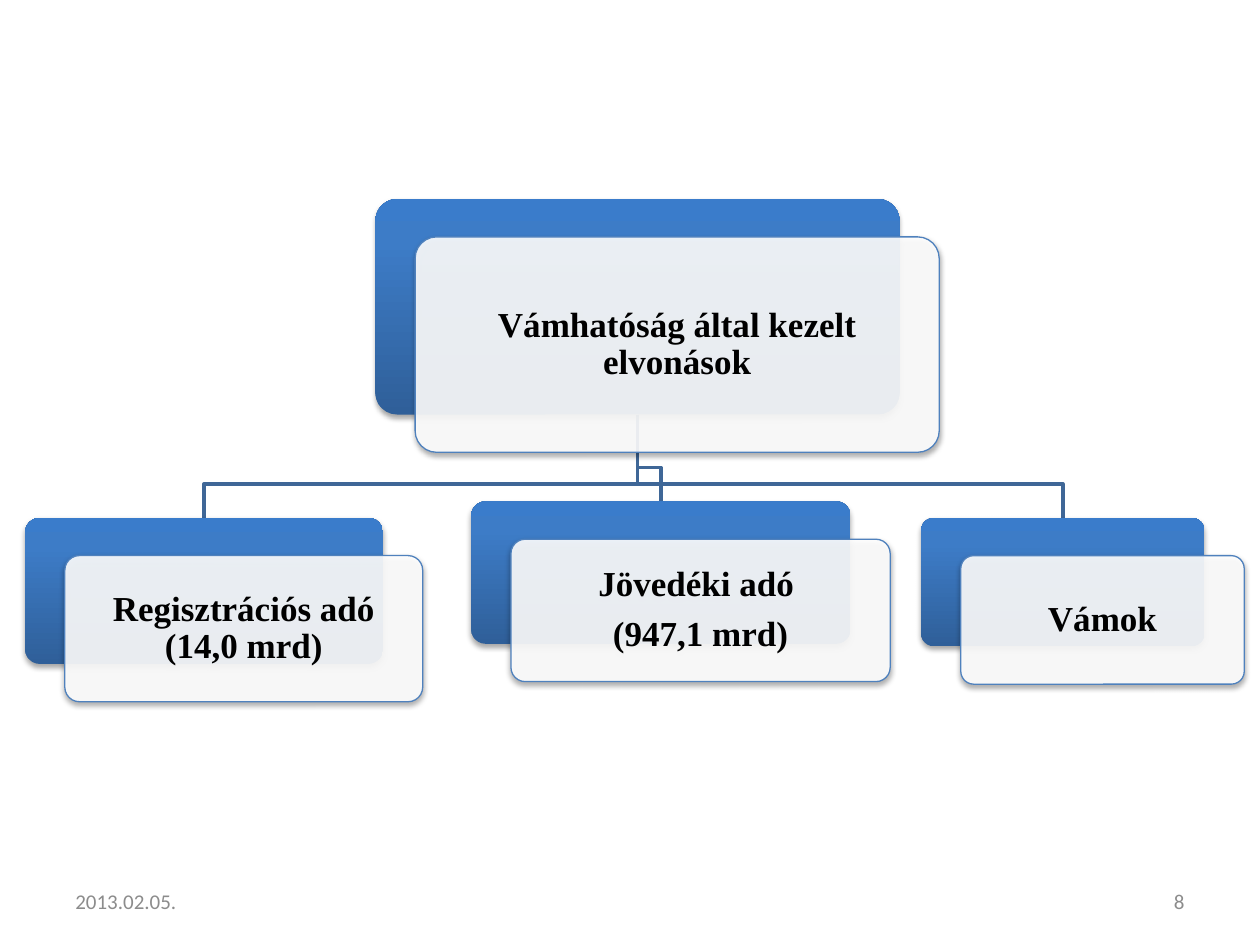
from copy import deepcopy

from lxml.etree import SubElement
from pptx import Presentation
from pptx.dml.color import RGBColor
from pptx.enum.shapes import MSO_SHAPE
from pptx.enum.text import MSO_ANCHOR, PP_ALIGN
from pptx.oxml.ns import qn
from pptx.util import Inches, Pt

SLIDE_W, SLIDE_H = Inches(10), Inches(7.5)
COL, ROW = SLIDE_W / 100, SLIDE_H / 75

WHITE = RGBColor(0xFF, 0xFF, 0xFF)
BLACK = RGBColor(0x00, 0x00, 0x00)
GREY = RGBColor(0x8C, 0x8C, 0x8C)
BRANCH_BLUE = RGBColor(0x3F, 0x67, 0x97)
CARD_EDGE = RGBColor(0x4F, 0x81, 0xBD)
DEEP_BLUE = RGBColor(0x2F, 0x5F, 0x99)
MID_BLUE = RGBColor(0x3D, 0x7C, 0xC7)
TOP_BLUE = RGBColor(0x3A, 0x7C, 0xCB)

CARD_SHIFT_X, CARD_SHIFT_Y = 3.15, 3
BEND_ABOVE_CHILD = 2.7

ROOT = ((29.8, 15.8, 41.6, 17.1), ["Vámhatóság által kezelt elvonások"])
CHILDREN = [
    ((2, 41.1, 28.4, 11.6), ["Regisztrációs adó (14,0 mrd)"]),
    ((37.4, 39.8, 30.1, 11.3), ["Jövedéki adó ", "(947,1 mrd)"]),
    ((73.1, 41.1, 22.5, 10.2), ["Vámok"]),
]


def grid(left, top, width, height):
    return [round(n) for n in (left * COL, top * ROW, width * COL, height * ROW)]


def add_text(paragraph, text, font_name, size, color, bold=False):
    run = paragraph.add_run()
    run.text = text
    run.font.name = font_name
    run.font.size = Pt(size)
    run.font.color.rgb = color
    run.font.bold = bold


def add_shadow(panel):
    panel.shadow.inherit = False
    effects = panel._element.spPr.find(qn("a:effectLst"))
    shadow = SubElement(effects, qn("a:outerShdw"), blurRad=str(Pt(3.1)),
                        dist=str(Pt(1.8)), dir="5400000", rotWithShape="0")
    black = SubElement(shadow, qn("a:srgbClr"), val=str(BLACK))
    SubElement(black, qn("a:alpha"), val="35000")


def add_panel(slide, box):
    panel = slide.shapes.add_shape(MSO_SHAPE.ROUNDED_RECTANGLE, *grid(*box))
    panel.adjustments[0] = 0.1
    add_shadow(panel)
    return panel


def fill_blue(panel):
    panel.fill.gradient()
    panel.fill.gradient_angle = 90
    stop_list = panel._element.spPr.find(qn("a:gradFill")).find(qn("a:gsLst"))
    stop_list.insert(1, deepcopy(stop_list[0]))
    blues = [(0, DEEP_BLUE), (0.8, MID_BLUE), (1, TOP_BLUE)]
    for stop, (position, color) in zip(panel.fill.gradient_stops, blues):
        stop.position = position
        stop.color.rgb = color
    panel.line.fill.background()


def add_node(slide, box, lines):
    left, top, width, height = box
    fill_blue(add_panel(slide, box))

    card = add_panel(slide, (left + CARD_SHIFT_X, top + CARD_SHIFT_Y, width, height))
    card.fill.solid()
    card.fill.fore_color.rgb = WHITE
    white = card._element.spPr.find(qn("a:solidFill"))[0]
    SubElement(white, qn("a:alpha"), val="90000")
    card.line.color.rgb = CARD_EDGE
    card.line.width = Pt(0.75)

    label = card.text_frame
    label.word_wrap = True
    label.vertical_anchor = MSO_ANCHOR.MIDDLE
    label.margin_left = label.margin_right = Inches(0.08)
    label.margin_top = label.margin_bottom = Inches(0.08)
    for index, line in enumerate(lines):
        paragraph = label.add_paragraph() if index else label.paragraphs[0]
        paragraph.alignment = PP_ALIGN.CENTER
        paragraph.line_spacing = 0.9
        paragraph.space_after = Pt(7)
        add_text(paragraph, line, "Times New Roman", 20, BLACK, bold=True)


def add_branch(slide, parent, child):
    start_x, start_y = parent[0] + parent[2] / 2, parent[1] + parent[3]
    end_x, end_y = child[0] + child[2] / 2, child[1]
    bend_y = end_y - BEND_ABOVE_CHILD
    builder = slide.shapes.build_freeform(round(start_x * COL), round(start_y * ROW))
    corners = [(start_x, bend_y), (end_x, bend_y), (end_x, end_y)]
    builder.add_line_segments([(round(x * COL), round(y * ROW)) for x, y in corners],
                              close=False)
    branch = builder.convert_to_shape()
    branch.shadow.inherit = False
    branch.fill.background()
    branch.line.color.rgb = BRANCH_BLUE
    branch.line.width = Pt(2)


def add_tree(slide, root, children):
    for box, _ in reversed(children):
        add_branch(slide, root[0], box)
    for box, lines in [root, *children]:
        add_node(slide, box, lines)


def add_footer(slide, box, text, alignment):
    footer = slide.shapes.add_textbox(*grid(*box)).text_frame
    footer.word_wrap = True
    footer.vertical_anchor = MSO_ANCHOR.MIDDLE
    footer.paragraphs[0].alignment = alignment
    add_text(footer.paragraphs[0], text, "Calibri", 12, GREY)


def main():
    deck = Presentation()
    deck.slide_width, deck.slide_height = SLIDE_W, SLIDE_H
    slide = deck.slides.add_slide(deck.slide_layouts[6])
    add_tree(slide, ROOT, CHILDREN)
    add_footer(slide, (5, 69.5, 23.3, 4), "2013.02.05.", PP_ALIGN.LEFT)
    add_footer(slide, (71.7, 69.5, 23.3, 4), "8", PP_ALIGN.RIGHT)
    deck.save("out.pptx")


if __name__ == "__main__":
    main()
